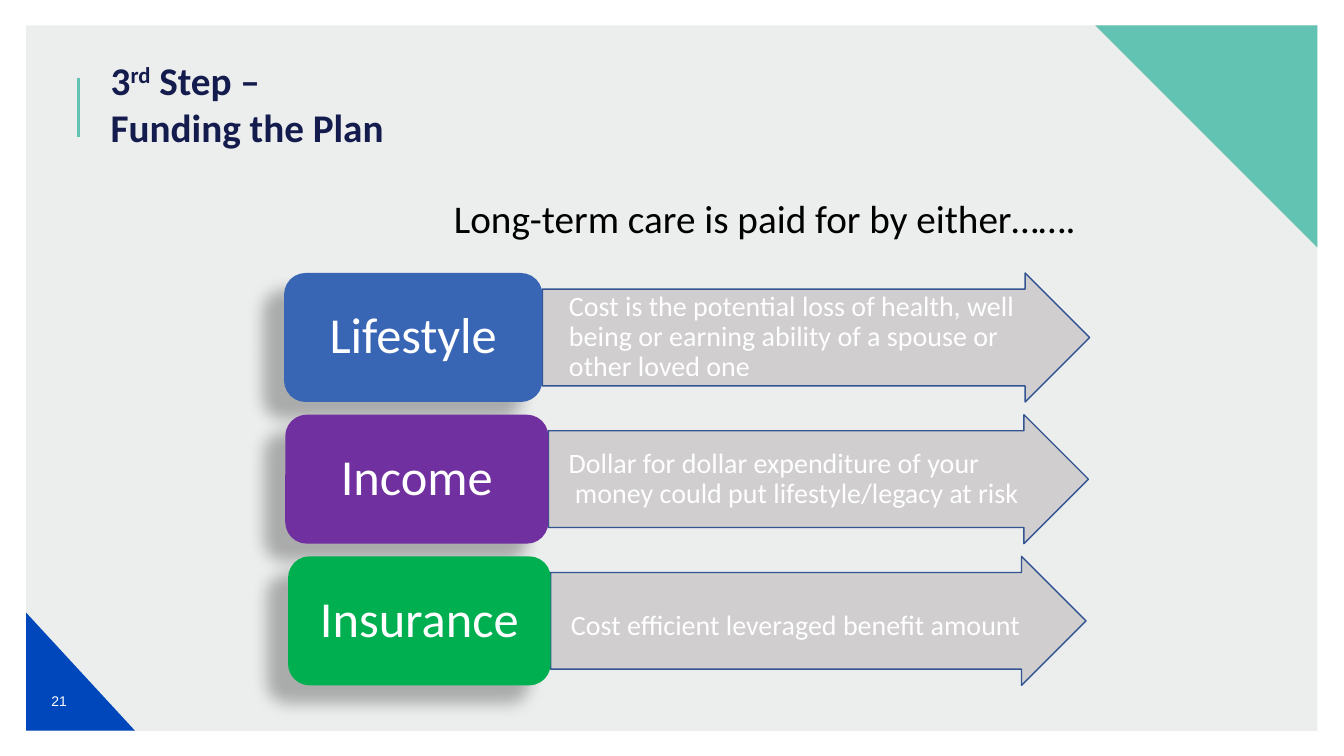
import pptx
import pptx.util
import pptx.dml.color
import pptx.enum.shapes
import pptx.enum.text
from lxml import etree
from pptx.oxml.ns import qn

Cm, Pt = pptx.util.Cm, pptx.util.Pt
RGB = pptx.dml.color.RGBColor
Kind = pptx.enum.shapes.MSO_SHAPE
Align = pptx.enum.text.PP_ALIGN
Anchor = pptx.enum.text.MSO_ANCHOR

WHITE = RGB(0xFF, 0xFF, 0xFF)
BLACK = RGB(0, 0, 0)
PANEL = RGB(0xD0, 0xD3, 0xD4)
TEAL = RGB(0x63, 0xC3, 0xB2)
COBALT = RGB(0x00, 0x47, 0xBB)
NAVY = RGB(0x14, 0x1B, 0x4D)
GREY = RGB(0xD0, 0xCE, 0xCE)
EDGE = RGB(0x32, 0x54, 0x91)
BLUE = RGB(0x39, 0x65, 0xB5)
PURPLE = RGB(0x70, 0x30, 0xA0)
GREEN = RGB(0x00, 0xB0, 0x50)

TITLE = [[("3", 0), ("rd", 30), (" Step –", 0)], [("Funding the Plan", 0)]]
LEAD = "Long-term care is paid for by either……."
# label, colour, cost, box left, arrow left, arrow tip, first-line indent, text drop (cm)
WAYS = [
    ("Lifestyle", BLUE, "Cost is the potential loss of health, well being or "
     "earning ability of a spouse or other loved one", 7.16, 13.67, 27.46, 0, 0),
    ("Income", PURPLE, "Dollar for dollar expenditure of your money could put "
     "lifestyle/legacy at risk", 7.19, 13.82, 27.43, -0.16, 0),
    ("Insurance", GREEN, "Cost efficient leveraged benefit amount",
     7.26, 13.88, 27.37, -0.16, 0.13),
]
TOP, PITCH, HIGH = 6.88, 3.57, 3.25
HEAD, HANG, INSET = 1.22, 0.64, 0.03

deck = pptx.Presentation()
deck.slide_width, deck.slide_height = Cm(33.87), Cm(19.05)
slide = deck.slides.add_slide(deck.slide_layouts[6])


def add_shape(kind, box, fill, line=None):
    shape = slide.shapes.add_shape(kind, *map(Cm, box))
    shape.shadow.inherit = False
    shape.fill.solid()
    shape.fill.fore_color.rgb = fill
    if line:
        shape.line.color.rgb = line
        shape.line.width = Pt(1)
    else:
        shape.line.fill.background()
    return shape


def add_box(box, anchor=Anchor.MIDDLE):
    frame = slide.shapes.add_textbox(*map(Cm, box)).text_frame
    frame.word_wrap = True
    frame.vertical_anchor = anchor
    return frame


def style(para, size, color, align=Align.LEFT, font="Calibri", bold=False):
    para.alignment = align
    for run in para.runs:
        run.font.size, run.font.name, run.font.bold = Pt(size), font, bold
        run.font.color.rgb = color


def set_alpha(color, share):
    etree.SubElement(color, qn("a:alpha")).set("val", str(share * 1000))


def drop_shadow(shape):
    """Soft black shadow to the lower left."""
    effects = shape._element.spPr.find(qn("a:effectLst"))
    shadow = etree.SubElement(
        effects, qn("a:outerShdw"), blurRad=str(Pt(11.8)), dist=str(Pt(19.7)),
        dir=str(141 * 60000), algn="ctr", rotWithShape="0")
    color = etree.SubElement(shadow, qn("a:srgbClr"), val="000000")
    set_alpha(color, 28)


# Backdrop
panel = add_shape(Kind.RECTANGLE, (0.66, 0.64, 32.54, 17.78), PANEL)
set_alpha(panel._element.spPr.find(".//" + qn("a:srgbClr")), 40)
add_shape(Kind.RIGHT_TRIANGLE, (0.66, 15.44, 2.74, 2.97), COBALT)
corner = add_shape(Kind.RIGHT_TRIANGLE, (27.6, 0.64, 5.6, 5.6), TEAL)
corner.rotation = 180
bar = slide.shapes.add_connector(
    pptx.enum.shapes.MSO_CONNECTOR.STRAIGHT, Cm(1.98), Cm(1.96), Cm(1.98), Cm(3.45))
bar.line.color.rgb = TEAL
bar.line.width = Pt(2)
etree.SubElement(bar._element.spPr, qn("a:effectLst"))

# Headings and page number
title = add_box((2.54, 1.3, 27.38, 2.31), Anchor.TOP)
for i, parts in enumerate(TITLE):
    para = title.add_paragraph() if i else title.paragraphs[0]
    for text, lift in parts:
        run = para.add_run()
        run.text = text
        if lift:
            run.font._element.set("baseline", str(lift * 1000))
    style(para, 28, NAVY, bold=True)

lead = add_box((11.19, 4.75, 18.9, 1.5))
lead.text = LEAD
style(lead.paragraphs[0], 28, BLACK)

page = add_box((0.79, 16.92, 1.4, 1.47))
page.text = "21"
style(page.paragraphs[0], 10, WHITE, Align.CENTER, "Arial")

# Ways to pay
for i, (label, color, cost, left, mid, tip, indent, drop) in enumerate(WAYS):
    top = TOP + i * PITCH
    arrow = add_shape(Kind.RIGHT_ARROW, (mid, top, tip - mid, HIGH), GREY, EDGE)
    arrow.adjustments[0], arrow.adjustments[1] = 0.75, 0.5

    frame = add_box((mid, top + HIGH / 8 + drop, tip - mid - HEAD, HIGH * 0.75))
    frame.margin_left = frame.margin_right = Cm(INSET)
    frame.margin_top = frame.margin_bottom = Cm(INSET)
    frame.text = cost
    para = frame.paragraphs[0]
    para.line_spacing = 0.9
    props = para._p.get_or_add_pPr()
    props.set("marL", str(Cm(HANG)))
    props.set("indent", str(Cm(indent)))
    style(para, 20, WHITE)

    card = add_shape(Kind.ROUNDED_RECTANGLE, (left, top, mid - left, HIGH), color)
    drop_shadow(card)
    frame = card.text_frame
    frame.vertical_anchor = Anchor.MIDDLE
    frame.text = label
    frame.paragraphs[0].line_spacing = 0.9
    style(frame.paragraphs[0], 36, WHITE, Align.CENTER)

deck.save("out.pptx")
